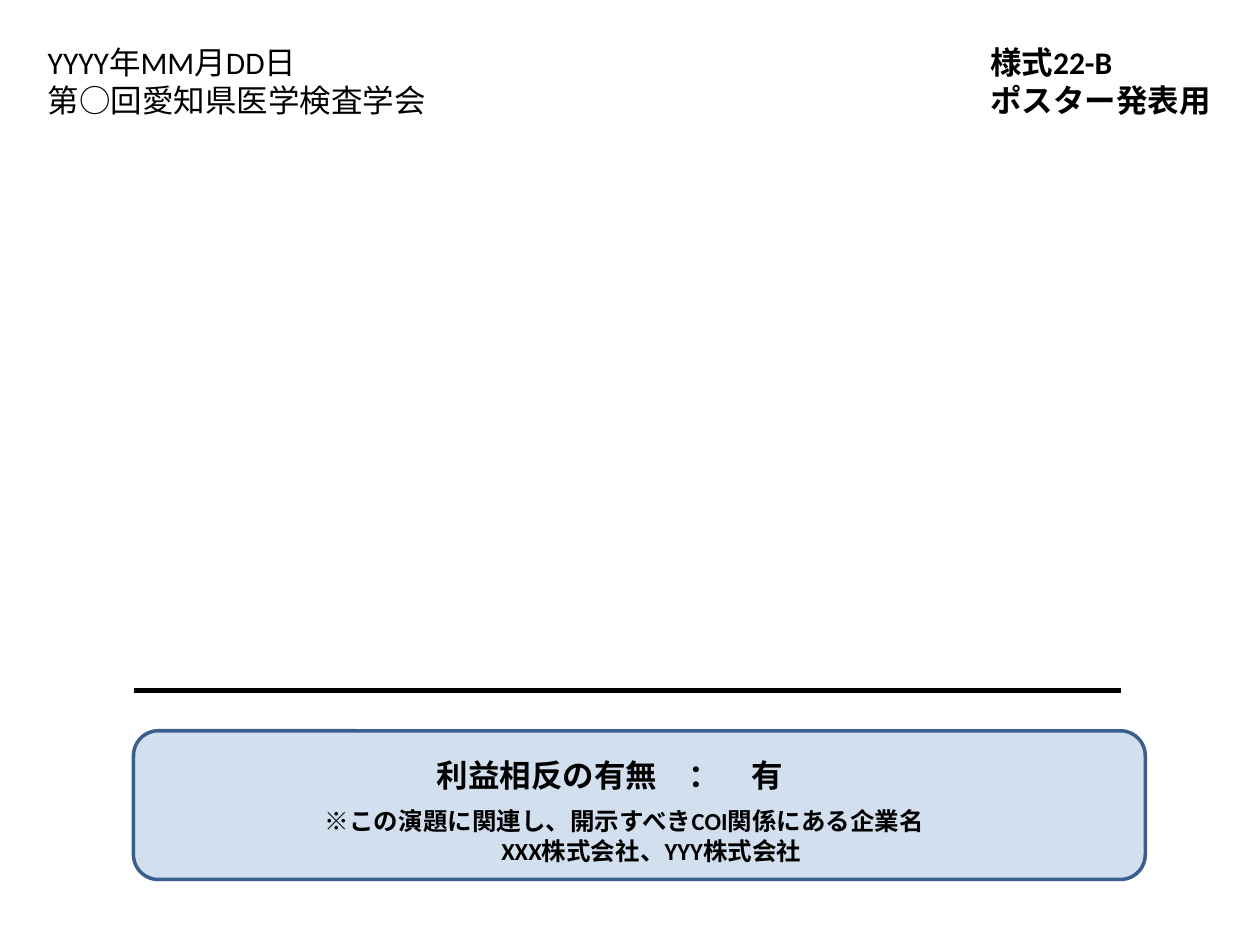
from lxml.etree import SubElement
from pptx import Presentation
from pptx.dml.color import RGBColor
from pptx.enum.shapes import MSO_CONNECTOR, MSO_SHAPE
from pptx.enum.text import MSO_AUTO_SIZE
from pptx.oxml.ns import qn
from pptx.util import Inches, Pt

COLORS = {"text": "000000", "rule": "000000", "panel": "4F81BD", "border": "3A5F8C"}
FONT = "Calibri"


def rgb(name):
    return RGBColor.from_string(COLORS[name])


def add_text(slide, box, lines, size=18, bold=False, wrap=True):
    """Add a text box with one paragraph per line and return its paragraphs."""
    frame = slide.shapes.add_textbox(*map(Inches, box)).text_frame
    frame.word_wrap = wrap
    frame.auto_size = MSO_AUTO_SIZE.SHAPE_TO_FIT_TEXT
    frame.text = "\n".join(lines)
    font_values = {"name": FONT, "size": Pt(size), "bold": bold}
    for paragraph in frame.paragraphs:
        for run in paragraph.runs:
            for key, value in font_values.items():
                setattr(run.font, key, value)
            run.font.color.rgb = rgb("text")
    return frame.paragraphs


def add_header(slide, left, top, width):
    height, form_width = 0.71, 1.97
    add_text(slide, (left, top, 3.31, height),
             ["YYYY年MM月DD日", "第○回愛知県医学検査学会"], wrap=False)
    add_text(slide, (left + width - form_width, top, form_width, height),
             ["様式22-B", "ポスター発表用"], bold=True, wrap=False)


def add_rule(slide, left, top, width):
    rule = slide.shapes.add_connector(
        MSO_CONNECTOR.STRAIGHT, *map(Inches, (left, top, left + width, top)))
    rule.line.color.rgb = rgb("rule")
    rule.line.width = Pt(3)
    SubElement(rule._element.spPr, qn("a:effectLst"))


def add_disclosure(slide, left, top, width, height):
    """Add the conflict-of-interest panel with its statement and companies."""
    panel = slide.shapes.add_shape(
        MSO_SHAPE.ROUNDED_RECTANGLE, *map(Inches, (left, top, width, height)))
    panel.shadow.inherit = False
    panel.fill.solid()
    panel.fill.fore_color.rgb = rgb("panel")
    panel_color = panel._element.spPr.find(qn("a:solidFill"))[0]
    SubElement(panel_color, qn("a:alpha"), val="25000")
    panel.line.color.rgb = rgb("border")
    panel.line.width = Pt(2)

    add_text(slide, (left + 2.31, top + 0.15, 3.23, 0.4),
             ["利益相反の有無　：　有"], bold=True, wrap=False)
    companies = add_text(
        slide, (left + 1.42, top + 0.55, 5.12, 0.57),
        ["※この演題に関連し、開示すべきCOI関係にある企業名",
         "XXX株式会社、YYY株式会社"], size=14, bold=True)[-1]
    companies._p.get_or_add_pPr().set("marL", str(Inches(1.4)))


def main():
    prs = Presentation()
    prs.slide_width, prs.slide_height = Inches(10), Inches(7.5)
    slide = prs.slides.add_slide(prs.slide_layouts[6])
    add_header(slide, 0.28, 0.29, 9.45)
    add_rule(slide, 1.06, 5.48, 7.84)
    add_disclosure(slide, 1.06, 5.8, 8.03, 1.18)
    prs.save("out.pptx")


if __name__ == "__main__":
    main()
